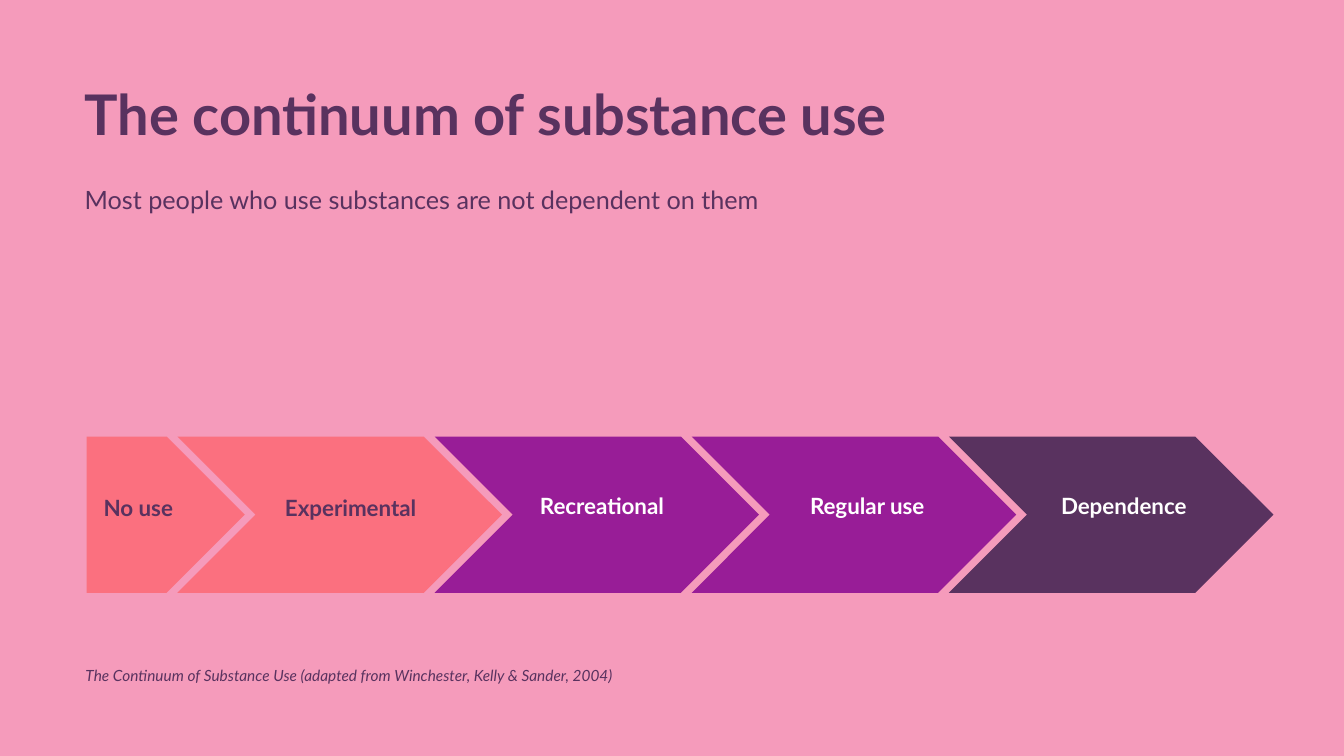
from lxml import etree
from pptx import Presentation
from pptx.dml.color import RGBColor
from pptx.enum import shapes, text
from pptx.oxml import ns
from pptx.util import Pt

COLORS = {
    "pink": "F59BBB",
    "coral": "FF585D",
    "purple": "981D97",
    "plum": "59325F",
    "white": "FFFFFF",
}
FONT = "Lato"

# label, fill, opacity in %, text colour, label offset (x, y), label width
STAGES = [
    ("No use", "coral", 63, "plum", (5, 37.4), 92),
    ("Experimental", "coral", 63, "plum", (69.8, 37.4), 128),
    ("Recreational", "purple", 100, "white", (68.2, 36), 160),
    ("Regular use", "purple", 100, "white", (77.4, 36), 123),
    ("Dependence", "plum", 100, "white", (73, 36), 125),
]


def rgb(name):
    return RGBColor.from_string(COLORS[name])


def add_text(s, box, words, size, color="plum", bold=False, italic=False, spacing=None):
    tb = s.shapes.add_textbox(*(Pt(v) for v in box))
    tf = tb.text_frame
    tf.word_wrap = True
    tf.vertical_anchor = text.MSO_ANCHOR.TOP
    p = tf.paragraphs[0]
    if spacing:
        p.line_spacing = spacing
    r = p.add_run()
    r.text = words
    r.font.name = FONT
    r.font.size = Pt(size)
    r.font.bold = bold
    r.font.italic = italic
    r.font.color.rgb = rgb(color)


def add_arrow(s, preset, box, color, opacity):
    sp = s.shapes.add_shape(preset, *(Pt(v) for v in box))
    sp.shadow.inherit = False
    sp.line.fill.background()
    sp.fill.solid()
    sp.fill.fore_color.rgb = rgb(color)
    if opacity < 100:
        clr = sp._element.spPr.find(".//" + ns.qn("a:srgbClr"))
        etree.SubElement(clr, ns.qn("a:alpha")).set("val", str(opacity * 1000))


def add_heading(s, left, top):
    add_text(s, (left, top, 713.5, 62), "The continuum of substance use", 40,
             bold=True, spacing=0.9)
    add_text(s, (left, top + 69.1, 577, 29),
             "Most people who use substances are not dependent on them", 18)


def add_continuum(s, left, top, height):
    """Draw a pentagon followed by evenly pitched chevrons, then their labels."""
    start_width, chevron_width, first_chevron, pitch = 113, 231.8, 64.8, 183.7
    lefts = [left] + [left + first_chevron + i * pitch for i in range(len(STAGES) - 1)]
    for i, (x, stage) in enumerate(zip(lefts, STAGES)):
        preset = shapes.MSO_SHAPE.CHEVRON if i else shapes.MSO_SHAPE.PENTAGON
        width = chevron_width if i else start_width
        add_arrow(s, preset, (x, top, width, height), stage[1], stage[2])
    for x, (label, _, _, color, (dx, dy), width) in zip(lefts, STAGES):
        add_text(s, (x + dx, top + dy, width, 26.6), label, 16, color, bold=True)


def add_source_note(s, left, top):
    add_text(s, (left, top, 440, 29.5),
             "The Continuum of Substance Use (adapted from Winchester, Kelly & Sander, 2004)",
             11, italic=True)


def main():
    prs = Presentation()
    prs.slide_width, prs.slide_height = Pt(960), Pt(540)
    s = prs.slides.add_slide(prs.slide_layouts[6])
    s.background.fill.solid()
    s.background.fill.fore_color.rgb = rgb("pink")
    add_heading(s, 53.4, 59)
    add_continuum(s, 61.9, 311.8, 111.6)
    add_source_note(s, 54, 472.3)
    prs.save("out.pptx")


if __name__ == "__main__":
    main()
